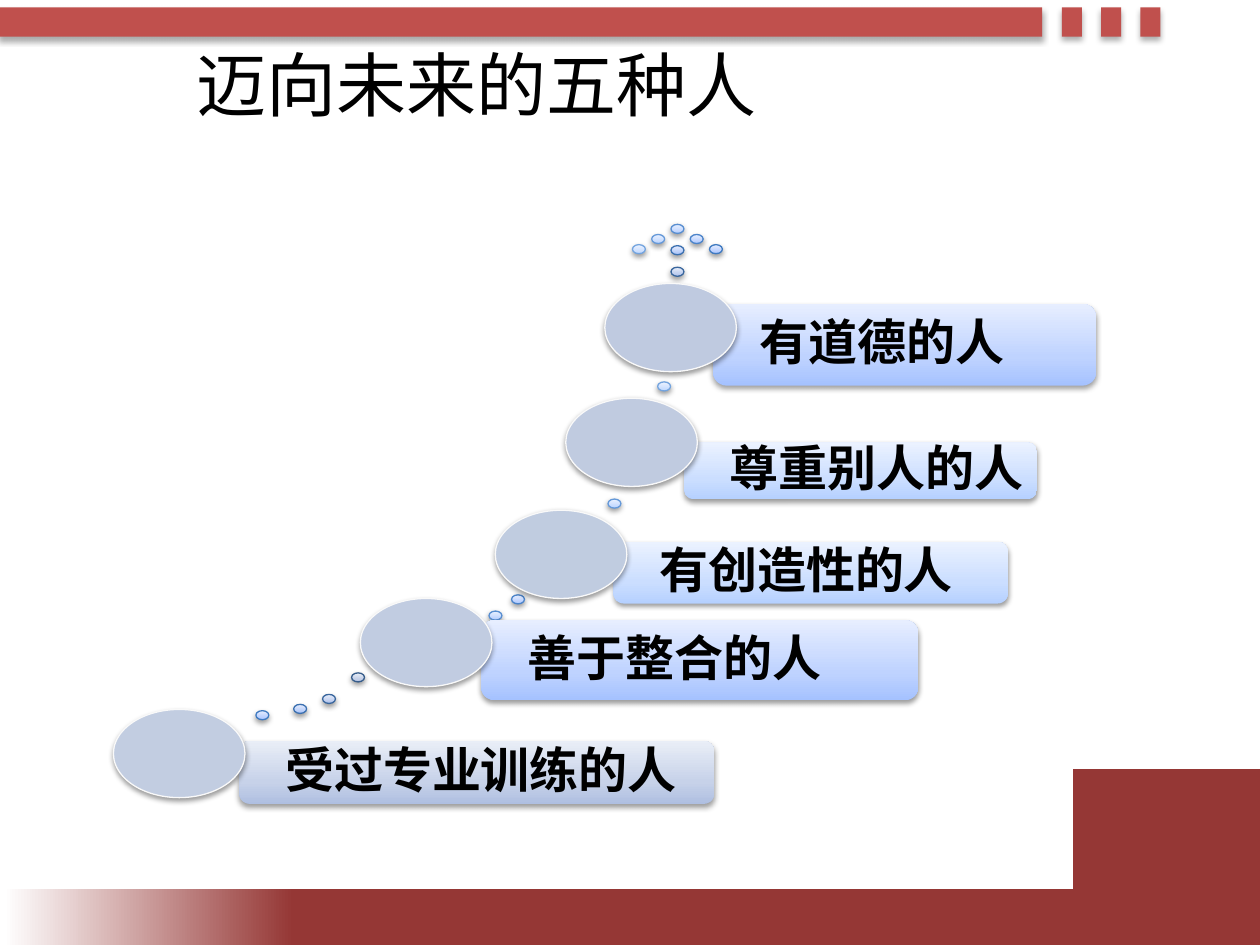
from copy import deepcopy

from lxml import etree
from pptx import Presentation
from pptx.dml.color import RGBColor
from pptx.enum.shapes import MSO_SHAPE
from pptx.enum.text import MSO_ANCHOR, PP_ALIGN
from pptx.oxml.ns import qn
from pptx.util import Pt

RECTANGLE, OVAL = MSO_SHAPE.RECTANGLE, MSO_SHAPE.OVAL
ROUNDED, CORNER = MSO_SHAPE.ROUNDED_RECTANGLE, MSO_SHAPE.CORNER
LEFT, TOP, MIDDLE = PP_ALIGN.LEFT, MSO_ANCHOR.TOP, MSO_ANCHOR.MIDDLE

BLACK = RGBColor(0x00, 0x00, 0x00)
WHITE = RGBColor(0xFF, 0xFF, 0xFF)
RED = RGBColor(0xC0, 0x50, 0x4D)
DARK_RED = RGBColor(0x95, 0x37, 0x35)
CIRCLE_EDGE = RGBColor(0xF9, 0xF9, 0xF9)

# Shades from dark to light: bottom, middle and top of the gradient, outline
SHADES = [
    [RGBColor.from_string(code) for code in row.split()]
    for row in (
        "AFBFE1 C7D2E9 E9EEF7 375D8B",
        "AABFEC C4D2F0 E8EEFA 39669D",
        "A3BFF9 BFD2FA E6EDFE 3B70B0",
        "A5C2FF BFD3FF E7EEFF 3F7AC1",
        "AAC7FF C3D6FF E8EFFF 4B84CA",
        "B0CCFF C7DAFF E9F1FF 588ED1",
        "B6D1FF CBDEFF EBF2FF 6599D9",
        "BCD6FF CFE1FF EDF3FF 73A4DF",
    )
]
SHADE_STOPS = (0, 0.35, 1)

# Opacity in percent, blur and distance in points
BAND_SHADOW = (32, 3.5, 2.2)
STEP_SHADOW = (38, 3.1, 1.6)

# Text, bar box, shade number, circle position, circle colour
STEPS = [
    ("受过专业训练的人", (72, 295.2, 271.4, 36), 0, (0, 277.2), RGBColor(0xC2, 0xCD, 0xE1)),
    ("善于整合的人", (210.2, 226.1, 249.8, 45.9), 3, (141.1, 213.8), RGBColor(0xC1, 0xCC, 0xE1)),
    ("有创造性的人", (285.8, 181.4, 225.4, 35.3), 6, (218.2, 163.4), RGBColor(0xC0, 0xCC, 0xE0)),
    ("尊重别人的人", (326.2, 124.6, 201.6, 32.6), 6, (258.5, 99.4), RGBColor(0xC0, 0xCB, 0xE0)),
    ("有道德的人", (342.7, 45.4, 218.9, 46.8), 3, (280.8, 33.8), RGBColor(0xBF, 0xCA, 0xE0)),
]
CIRCLE_SIZE = (75.2, 50.4)
DOT_SIZE = (7.4, 5.2)
TRAIL = [(136.1, 256.3), (119.5, 268.6), (103, 274.3), (81.4, 277.9),
         (227.5, 211.7), (214.6, 221), (282.6, 157), (311, 90)]
ARROW_TIP = 318.6
ARROW_HEAD = [(ARROW_TIP + 11 * i, 5.8 * abs(i)) for i in range(-2, 3)]
ARROW_STEM = [(ARROW_TIP, 12.2), (ARROW_TIP, 24.5)]


def set_values(target, values):
    for name, value in values.items():
        setattr(target, name, value)


def set_gradient(shape, colors, positions, angle):
    shape.fill.gradient()
    shape.fill.gradient_angle = angle
    first = shape._element.spPr.find(qn("a:gradFill")).find(qn("a:gsLst"))[0]
    first.addnext(deepcopy(first))
    for stop, color, position in zip(shape.fill.gradient_stops, colors, positions):
        stop.position = position
        stop.color.rgb = color


def set_shadow(shape, opacity, blur, distance):
    effects = shape._element.spPr.find(qn("a:effectLst"))
    outer = etree.SubElement(effects, qn("a:outerShdw"), {
        "blurRad": str(Pt(blur)), "dist": str(Pt(distance)),
        "dir": "5400000", "rotWithShape": "0"})
    color = etree.SubElement(outer, qn("a:srgbClr"), val=str(BLACK))
    etree.SubElement(color, qn("a:alpha"), val=str(opacity * 1000))


def add_part(slide, kind, box, fill=None, shade=None, edge=None, shadow=None):
    """Add a preset shape with a plain fill or a numbered shade."""
    shape = slide.shapes.add_shape(kind, *(Pt(length) for length in box))
    if shade is not None:
        set_gradient(shape, SHADES[shade][:3], SHADE_STOPS, 90)
    elif fill is not None:
        shape.fill.solid()
        shape.fill.fore_color.rgb = fill
    if edge is None:
        shape.line.fill.background()
    else:
        shape.line.color.rgb = edge
        shape.line.width = Pt(0.75)
    shape.shadow.inherit = False
    if shadow:
        set_shadow(shape, *shadow)
    return shape


def write_text(shape, text, frame_values, paragraph_values, font_values):
    frame = shape.text_frame
    frame.text = text
    set_values(frame, {"word_wrap": True, **frame_values})
    paragraph = frame.paragraphs[0]
    set_values(paragraph, {"alignment": LEFT, **paragraph_values})
    font = paragraph.runs[0].font
    set_values(font, font_values)
    font.color.rgb = BLACK


def add_top_band(slide, box):
    """One long bar, then three short blocks at equal steps up to the right end."""
    left, top, width, height = box
    block, step = 11.5, 22.4
    add_part(slide, RECTANGLE, (left, top, width - 67.5, height), RED, shadow=BAND_SHADOW)
    for i in range(3):
        x = left + width - block - i * step
        add_part(slide, RECTANGLE, (x, top, block, height), RED, shadow=BAND_SHADOW)


def add_footer(slide, box):
    corner = add_part(slide, CORNER, box)
    corner.adjustments[0], corner.adjustments[1] = 0.32, 1.07
    corner._element.spPr.xfrm.set("flipH", "1")
    set_gradient(corner, (WHITE, DARK_RED, DARK_RED), (0, 0.23, 1), 180)


def add_title(slide, box):
    title = slide.shapes.title
    set_values(title, dict(zip(("left", "top", "width", "height"), map(Pt, box))))
    write_text(title, "迈向未来的五种人", {"vertical_anchor": TOP}, {},
               {"name": "Noto Sans CJK SC", "size": Pt(40)})


def add_dots(slide, left, top):
    """Dots between the steps, then an arrow of dots in the reverse order of shades."""
    arrow = ARROW_HEAD + ARROW_STEM
    numbered = [*enumerate(TRAIL), *zip(range(7, 0, -1), arrow)]
    for shade, (x, y) in numbered:
        add_part(slide, OVAL, (left + x, top + y, *DOT_SIZE), shade=shade,
                 edge=SHADES[shade][3], shadow=STEP_SHADOW)


def add_steps(slide, left, top):
    for text, (x, y, width, height), shade, (circle_x, circle_y), color in STEPS:
        bar = add_part(slide, ROUNDED, (left + x, top + y, width, height),
                       shade=shade, shadow=STEP_SHADOW)
        write_text(bar, text,
                   {"vertical_anchor": MIDDLE, "margin_left": Pt(24.5), "margin_right": Pt(5),
                    "margin_top": Pt(5), "margin_bottom": Pt(5)},
                   {"line_spacing": 0.9},
                   {"name": "Calibri", "size": Pt(28), "bold": True})
        add_part(slide, OVAL, (left + circle_x, top + circle_y, *CIRCLE_SIZE), color,
                 edge=CIRCLE_EDGE, shadow=STEP_SHADOW)


def main():
    presentation = Presentation()
    presentation.slide_width, presentation.slide_height = Pt(720), Pt(540)
    slide = presentation.slides.add_slide(presentation.slide_layouts[5])
    add_top_band(slide, (-0.7, 4.3, 663.8, 16.6))
    add_footer(slide, (2.2, 439.2, 720, 101.5))
    add_title(slide, (105.1, 20.2, 408.2, 55.4))
    diagram_left, diagram_top = 64.8, 128.2
    add_dots(slide, diagram_left, diagram_top)
    add_steps(slide, diagram_left, diagram_top)
    presentation.save("out.pptx")


if __name__ == "__main__":
    main()
